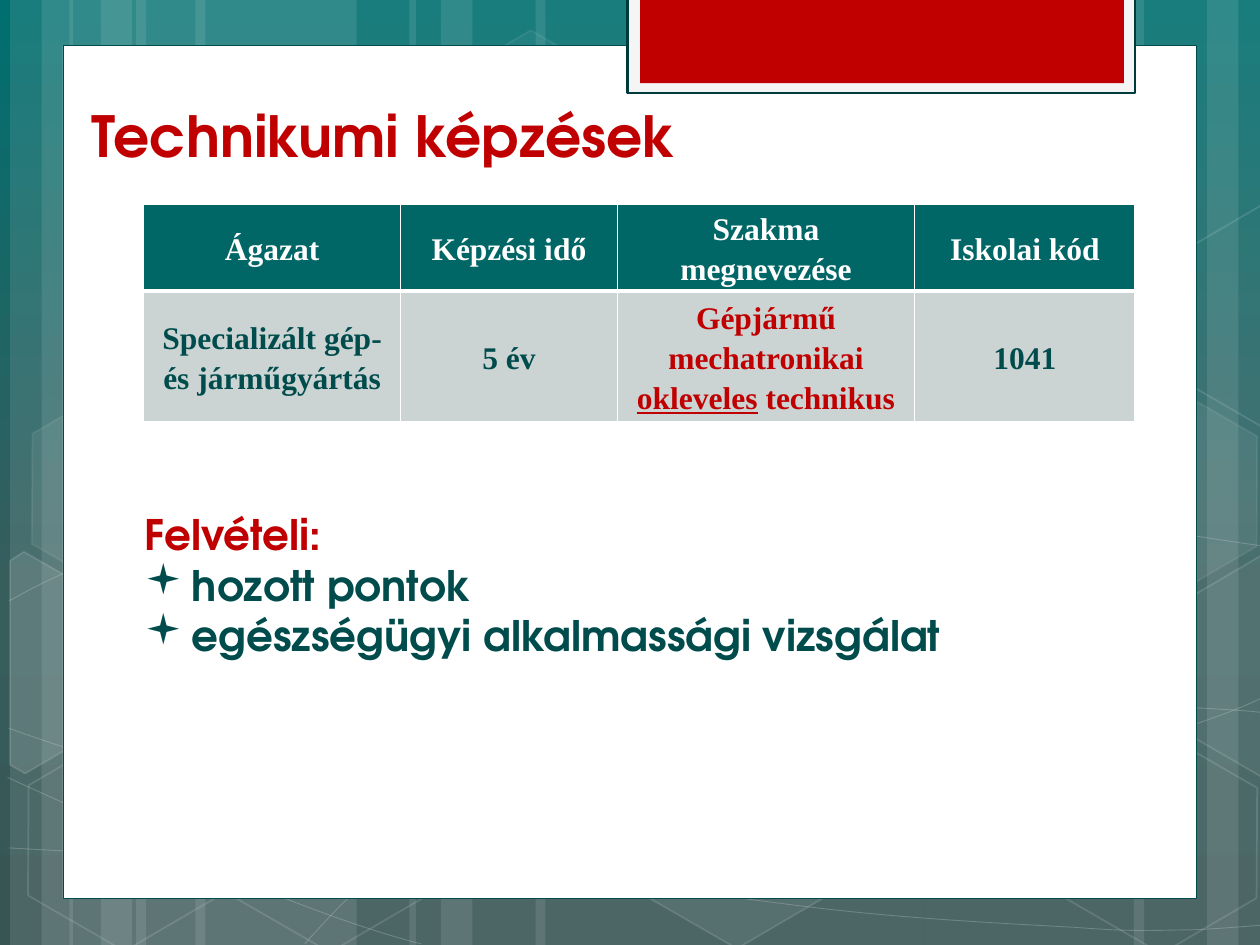
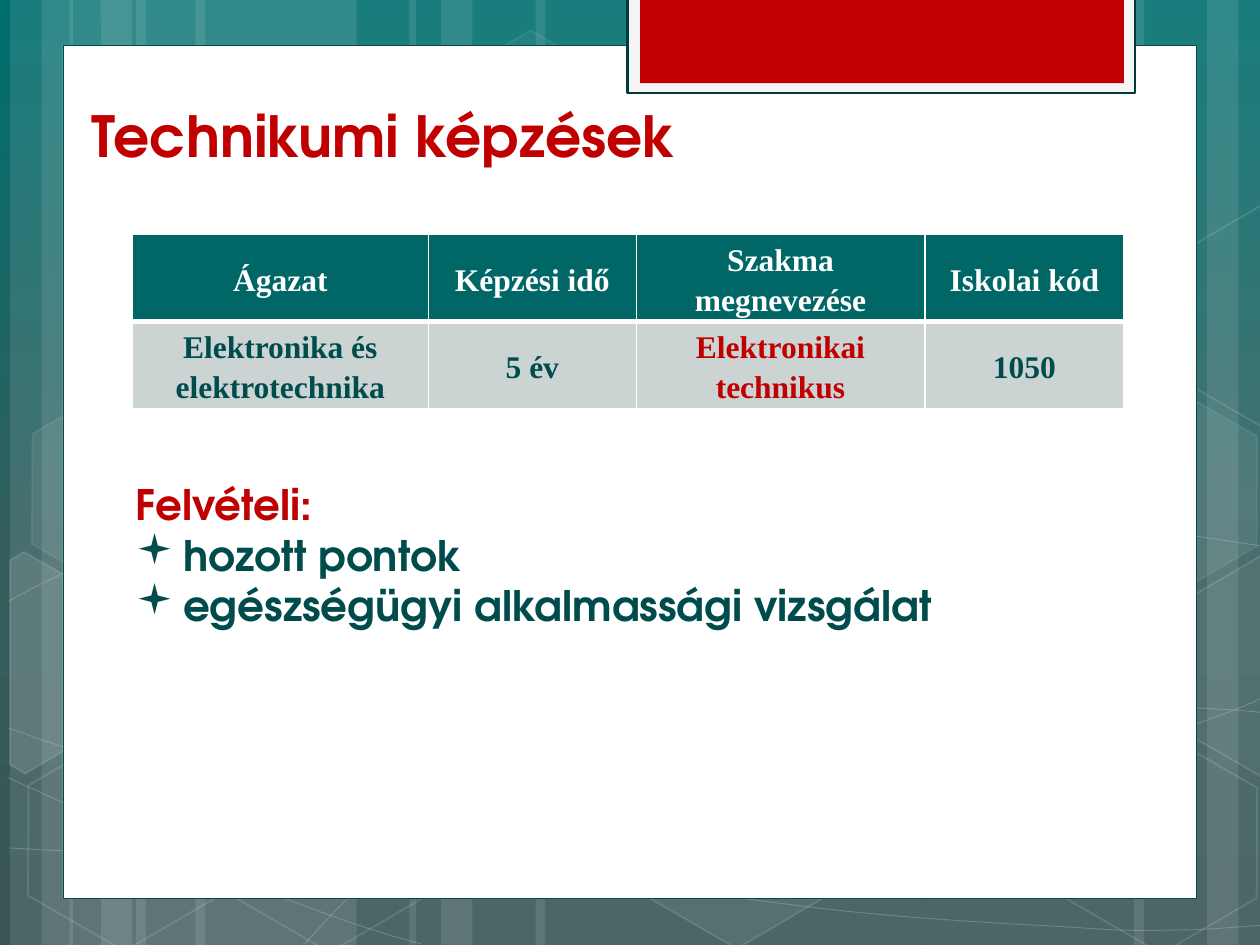
from lxml.etree import SubElement
from pptx import Presentation
from pptx.dml.color import RGBColor as Color
from pptx.enum.shapes import MSO_SHAPE as Shape
from pptx.enum.text import MSO_ANCHOR as Anchor, MSO_AUTO_SIZE as AutoSize, PP_ALIGN as Align
from pptx.oxml import parse_xml
from pptx.oxml.ns import nsdecls, qn
from pptx.util import Pt

COLORS = {
    "white": "FFFFFF", "red": "C00000", "teal": "006666", "dark": "004C4C",
    "edge": "003B3C", "frame": "F5F5F5", "cell": "CCD3D3",
    "top": "006F6F", "middle": "375D5D", "bottom": "385555",
}
HEADING_FONT, TABLE_FONT = "TeX Gyre Adventor", "Times New Roman"

# The grid has 10 columns and 7.5 rows of square units
UNIT = 914400
COLUMNS, ROWS = 10, 7.5

# Background: stripe width -> left edges
STRIPES = {1.75: [1.08, 1.55, 7.33], 0.5: [0.08, 0.55, 3.25, 9.58],
           0.83: [0.33, 0.8, 3.5, 9], 3.08: [4.25]}
# Each curve is a start point followed by Bezier triples
CURVES = [
    [(0.07, 6.73), (0.61, 6.76), (1.15, 6.79), (1.9, 6.78), (2.65, 6.77),
     (3.58, 6.75), (4.58, 6.65), (5.58, 6.55), (7, 6.36), (7.92, 6.17),
     (8.83, 5.98), (9.77, 5.68), (10.07, 5.51)],
    [(0.07, 4.77), (0.36, 4.61), (0.65, 4.46), (1.21, 4.31), (1.78, 4.16),
     (2.59, 3.94), (3.47, 3.87), (4.36, 3.8), (5.44, 3.79), (6.54, 3.87),
     (7.64, 3.95), (9.47, 4.26), (10.07, 4.34)],
    [(0.06, 6.17), (1.27, 6.72), (2.47, 7.27), (3.34, 7.49)],
    [(0.07, 5.78), (0.38, 5.89), (0.7, 6), (1.28, 6.16), (1.86, 6.31),
     (2.73, 6.56), (3.57, 6.73), (4.4, 6.9), (5.45, 7.08), (6.28, 7.18),
     (7.11, 7.29), (8, 7.33), (8.53, 7.36), (9.05, 7.4), (9.19, 7.38),
     (9.45, 7.38), (9.71, 7.37), (9.89, 7.35), (10.07, 7.34)],
    [(2.42, 7.49), (2.6, 7.29), (2.78, 7.09), (3.02, 6.91), (3.26, 6.73),
     (3.6, 6.53), (3.88, 6.39), (4.16, 6.25), (4.33, 6.19), (4.7, 6.09),
     (5.06, 5.99), (5.73, 5.85), (6.08, 5.78), (6.44, 5.71), (6.49, 5.71),
     (6.8, 5.69), (7.11, 5.66), (7.6, 5.63), (7.94, 5.62), (8.29, 5.61),
     (8.86, 5.62), (8.86, 5.62), (9.08, 5.62), (9.31, 5.62), (9.53, 5.62),
     (9.71, 5.63), (9.88, 5.64), (9.97, 5.65), (10.06, 5.66),
     (10.03, 5.65), (10.06, 5.66)],
]
# The last curve has one straight piece; it starts after this many points
STRAIGHT_AFTER = 21
CURVES[-1][STRAIGHT_AFTER:STRAIGHT_AFTER + 4] = [(9.53, 5.62)]
# Hexagons: left, top, fill opacity, line opacity in percent
HEXAGONS = [(3.34, 0.36, 4, 8), (4.97, 5.89, 6, 12), (0.11, 5.91, 0, 12),
            (0.14, 3.12, 7, 8), (1.74, 5.92, 0, 12), (7.53, 4.53, 10, 12),
            (8.34, 5.93, 0, 12), (8.34, 3.14, 7, 8)]
# Hexagons cut by the slide edge: fill opacity, corners
CUT_HEXAGONS = [
    (10, [(0.08, 4.45), (0.19, 4.38), (0.96, 4.82), (0.95, 5.7), (0.2, 6.14), (0.08, 6.07)]),
    (4, [(9.26, 4.85), (10.01, 4.41), (10.09, 4.46), (10.09, 6.13), (10.02, 6.17), (9.26, 5.73)]),
    (0, [(9.26, 2.07), (10.01, 1.63), (10.1, 1.68), (10.09, 3.35), (10.02, 3.39), (9.26, 2.95)]),
]
# White card and the red tab on top of it: area, fill, line, line width
PANELS = [((0.5, 0.36, 9, 6.77), "white", "dark", 0.5),
          ((4.98, -0.02, 4.03, 0.76), "frame", "edge", 1.25),
          ((5.08, -0.02, 3.84, 0.68), "red", None, 0)]

# Slide contents
TITLE = "Technikumi képzések"
HEADERS = ["Ágazat", "Képzési idő", "Szakma megnevezése", "Iskolai kód"]
ADMISSION = ["Felvételi:", "hozott pontok", "egészségügyi alkalmassági vizsgálat"]
PAGES = [
    {"branch": "Specializált gép- és járműgyártás", "code": "1041",
     "trade": ["Gépjármű mechatronikai ", "okleveles", " technikus"],
     "corner": (1.14, 1.62), "widths": [2.04, 1.72, 2.36, 1.75],
     "heights": [0.66, 0.81], "admission": (1.05, 3.99, 8.06, 1.31)},
    {"branch": "Elektronika és elektrotechnika", "code": "1050",
     "trade": ["Elektronikai technikus"],
     "corner": (1.05, 1.86), "widths": [2.35, 1.65, 2.29, 1.58],
     "heights": [0.69, 0.41], "admission": (0.98, 3.75, 8.32, 1.31)},
]


def write(para, text, size=18, font=TABLE_FONT, color="dark", underline=False):
    span = para.add_run()
    span.text = text
    span.font.size, span.font.name = Pt(size), font
    span.font.bold, span.font.underline = True, underline
    span.font.color.rgb = Color.from_string(COLORS[color])


def paint(shape, fill=None, line=None, width=1, fill_opacity=100, line_opacity=100):
    shape.shadow.inherit = False
    properties = shape._element.spPr
    for part, color, opacity, tag in ((shape.fill, fill, fill_opacity, "a:solidFill"),
                                      (shape.line.fill, line, line_opacity, "a:ln")):
        if not color or not opacity:
            part.background()
            continue
        part.solid()
        part.fore_color.rgb = Color.from_string(COLORS[color])
        if opacity < 100:
            tint = next(properties.find(qn(tag)).iter(qn("a:srgbClr")))
            SubElement(tint, qn("a:alpha"), val=str(opacity * 1000))
    if line:
        shape.line.width = Pt(width)


deck = Presentation()
deck.slide_width, deck.slide_height = COLUMNS * UNIT, int(ROWS * UNIT)
blank = deck.slide_layouts[6]
for holder in list(blank.placeholders):
    holder._element.getparent().remove(holder._element)
pages = [deck.slides.add_slide(blank) for _ in PAGES]

# Background gradient
blank.background.fill.solid()
stops = "".join(f'<a:gs pos="{share * 1000}"><a:srgbClr val="{COLORS[name]}"/></a:gs>'
                for share, name in ((0, "top"), (62, "middle"), (100, "bottom")))
solid = next(blank._element.iter(qn("a:solidFill")))
solid.getparent().replace(solid, parse_xml(
    f'<a:gradFill {nsdecls("a")} rotWithShape="1"><a:gsLst>{stops}</a:gsLst>'
    '<a:lin ang="5400000" scaled="0"/></a:gradFill>'))

# Stripes
shapes = pages[0].shapes
for width, lefts in STRIPES.items():
    for left in lefts:
        stripe = shapes.add_shape(Shape.RECTANGLE, int(left * UNIT), 0,
                                  int(width * UNIT), deck.slide_height)
        paint(stripe, "white", fill_opacity=10)

# Thin curves: each three line steps become one Bezier step
for curve in CURVES:
    points = [(int(x * UNIT), int(y * UNIT)) for x, y in curve]
    builder = shapes.build_freeform(*points[0])
    builder.add_line_segments(points[1:], close=False)
    shape = builder.convert_to_shape()
    steps = list(shape._element.iter(qn("a:lnTo")))
    if len(steps) % 3:
        del steps[STRAIGHT_AFTER - 1]
    for index in range(0, len(steps), 3):
        bend = parse_xml(f'<a:cubicBezTo {nsdecls("a")}/>')
        steps[index].addprevious(bend)
        for step in steps[index:index + 3]:
            bend.append(step[0])
            step.getparent().remove(step)
    paint(shape, line="white", width=0.5, line_opacity=20)

# Hexagons
for left, top, fill_opacity, line_opacity in HEXAGONS:
    hexagon = shapes.add_shape(Shape.HEXAGON, int(left * UNIT), int(top * UNIT),
                               int(1.75 * UNIT), int(1.52 * UNIT))
    hexagon.rotation = 30
    hexagon.adjustments[0] = 0.285
    paint(hexagon, "white", "white", 1, fill_opacity, line_opacity)
for fill_opacity, outline in CUT_HEXAGONS:
    corners = [(int(x * UNIT), int(y * UNIT)) for x, y in outline]
    builder = shapes.build_freeform(*corners[0])
    builder.add_line_segments(corners[1:], close=True)
    paint(builder.convert_to_shape(), "white", "white", 1, fill_opacity, 12)

# Card and tab
for area, fill, line, width in PANELS:
    panel = shapes.add_shape(Shape.RECTANGLE, *(int(n * UNIT) for n in area))
    paint(panel, fill, line, width)

# All of this belongs to the layout that the slides share
for shape in list(shapes):
    blank.shapes._spTree.append(shape._element)

for page, content in zip(pages, PAGES):
    shapes = page.shapes

    # Title
    box = shapes.add_textbox(*(int(n * UNIT) for n in (0.63, 0.76, 8.37, 0.63)))
    box.text_frame.word_wrap = True
    box.text_frame.vertical_anchor = Anchor.BOTTOM
    write(box.text_frame.paragraphs[0], TITLE, size=32.4, font=HEADING_FONT, color="red")

    # Table of trades
    area = [int(n * UNIT) for n in (*content["corner"], sum(content["widths"]),
                                    sum(content["heights"]))]
    table = shapes.add_table(2, len(HEADERS), *area).table
    for column, width in zip(table.columns, content["widths"]):
        column.width = int(width * UNIT)
    for row, height in zip(table.rows, content["heights"]):
        row.height = int(height * UNIT)
    body = [[content["branch"]], ["5 év"], content["trade"], [content["code"]]]
    for r, texts in enumerate(([[header] for header in HEADERS], body)):
        for c, pieces in enumerate(texts):
            cell = table.cell(r, c)
            cell.vertical_anchor = Anchor.MIDDLE
            cell.margin_left = cell.margin_right = int(0.07 * UNIT)
            cell.margin_top = cell.margin_bottom = 0
            # Borders come before the fill
            for side in "LRTB":
                thick = (r, side) in ((0, "B"), (1, "T"))
                border = SubElement(cell._tc.get_or_add_tcPr(), qn("a:ln" + side),
                                    w=str(Pt(3 if thick else 1)))
                paper = SubElement(border, qn("a:solidFill"))
                SubElement(paper, qn("a:srgbClr"), val=COLORS["white"])
            cell.fill.solid()
            cell.fill.fore_color.rgb = Color.from_string(COLORS["cell" if r else "teal"])
            para = cell.text_frame.paragraphs[0]
            para.alignment, para.line_spacing = Align.CENTER, 1.15
            color = "white" if r == 0 else "red" if c == 2 else "dark"
            for piece in pieces:
                write(para, piece, color=color, underline=piece == "okleveles")

    # Admission list
    box = shapes.add_textbox(*(int(n * UNIT) for n in content["admission"]))
    box.text_frame.word_wrap = True
    box.text_frame.auto_size = AutoSize.SHAPE_TO_FIT_TEXT
    for index, text in enumerate(ADMISSION):
        para = box.text_frame.add_paragraph() if index else box.text_frame.paragraphs[0]
        write(para, text, size=24, font=HEADING_FONT, color="dark" if index else "red")
        if index:
            layout = para._p.get_or_add_pPr()
            layout.set("marL", str(Pt(27)))
            layout.set("indent", str(-Pt(27)))
            SubElement(layout, qn("a:buFont"), typeface="Wingdings")
            SubElement(layout, qn("a:buChar"), char="▪")

deck.save("out.pptx")
